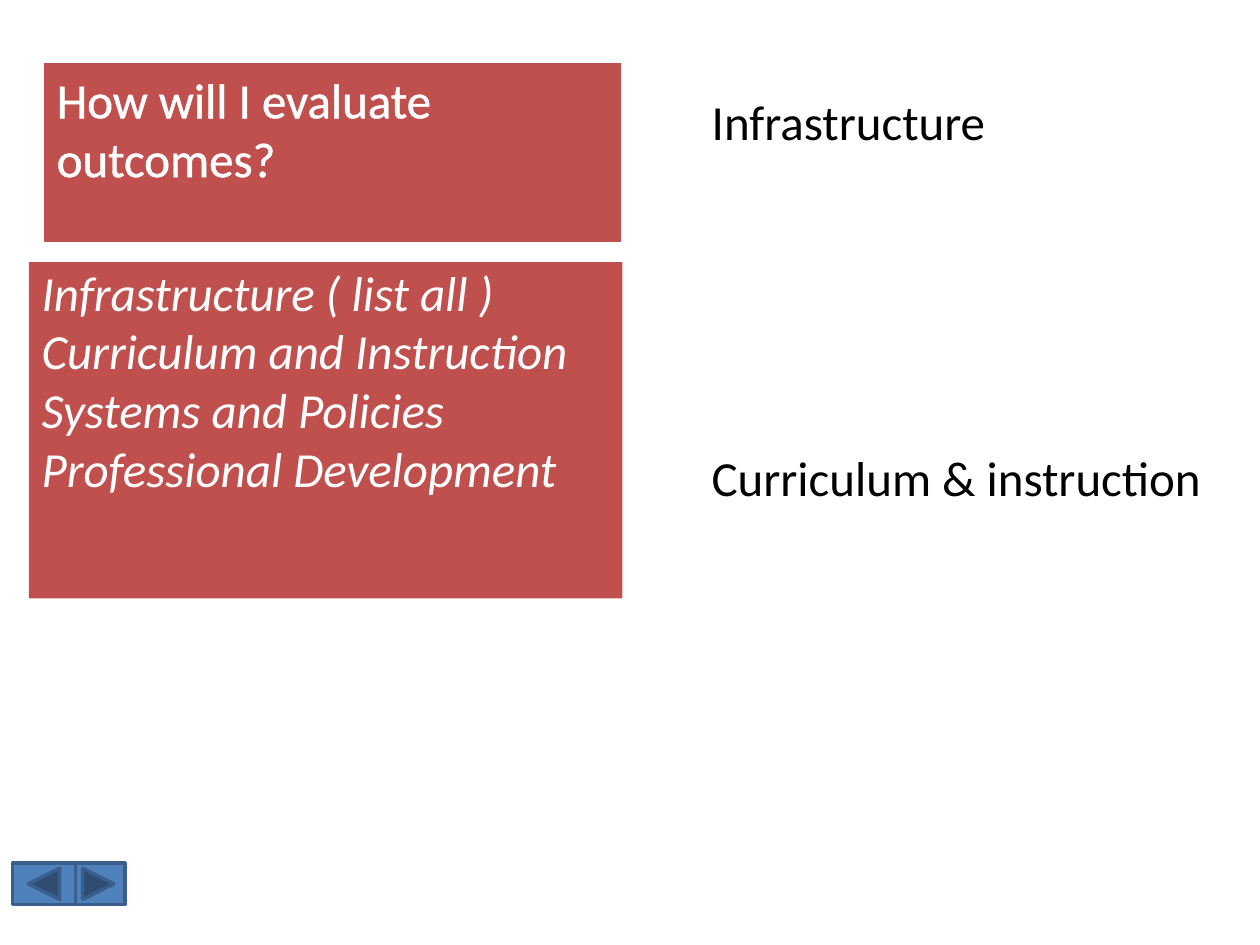
from lxml import etree
from pptx import Presentation
from pptx.dml.color import RGBColor
from pptx.enum.shapes import MSO_SHAPE
from pptx.enum.text import MSO_ANCHOR, MSO_AUTO_SIZE, PP_ALIGN
from pptx.oxml.ns import qn
from pptx.util import Inches, Pt

RED = RGBColor(0xC0, 0x50, 0x4D)
BLUE = RGBColor(0x4F, 0x81, 0xBD)
NAVY = RGBColor(0x3A, 0x5F, 0x8C)
WHITE = RGBColor(0xFF, 0xFF, 0xFF)
BLACK = RGBColor(0, 0, 0)
BACK = MSO_SHAPE.ACTION_BUTTON_BACK_OR_PREVIOUS
NEXT = MSO_SHAPE.ACTION_BUTTON_FORWARD_OR_NEXT
TOP, LEFT = MSO_ANCHOR.TOP, PP_ALIGN.LEFT
FIXED, GROW = MSO_AUTO_SIZE.NONE, MSO_AUTO_SIZE.SHAPE_TO_FIT_TEXT


def style(para, color):
    para.alignment = LEFT
    para.font.name = "Calibri"
    para.font.size = Pt(28)
    para.font.color.rgb = color


def panel(shape, left, top, width, height):
    shape.left, shape.top = Inches(left), Inches(top)
    shape.width, shape.height = Inches(width), Inches(height)
    shape.fill.solid()
    shape.fill.fore_color.rgb = RED
    frame = shape.text_frame
    frame.word_wrap = True
    frame.auto_size = FIXED
    frame.vertical_anchor = TOP
    return frame


prs = Presentation()
prs.slide_width, prs.slide_height = Inches(10), Inches(7.5)
slide = prs.slides.add_slide(prs.slide_layouts[1])
shapes = slide.shapes

# Question, with a thin white outline on its letters
frame = panel(shapes.title, 0.35, 0.5, 4.58, 1.42)
frame.text = "How will I evaluate outcomes?"
style(frame.paragraphs[0], WHITE)
props = frame.paragraphs[0].runs[0].font._element
edge = etree.Element(qn("a:ln"), w=str(Pt(1.45)))
fill = etree.SubElement(edge, qn("a:solidFill"))
etree.SubElement(fill, qn("a:srgbClr"), val=str(WHITE))
props.insert(0, edge)

# List of areas
frame = panel(slide.placeholders[1], 0.23, 2.08, 4.71, 2.67)
frame.margin_top = 0
frame.text = "\n".join([
    "Infrastructure ( list all )",
    "Curriculum and Instruction",
    "Systems and Policies",
    "Professional Development",
])
for para in frame.paragraphs:
    para.space_before = Pt(0)
    props = para._p.get_or_add_pPr()
    props.set("marL", "0")
    props.set("indent", "0")
    etree.SubElement(props, qn("a:buNone"))
    style(para, WHITE)
    para.font.italic = True

# Labels on the right
for text, top, width in [
    ("Infrastructure", 0.68, 3.62),
    ("Curriculum & instruction", 3.5, 4.17),
]:
    box = shapes.add_textbox(Inches(5.55), Inches(top), Inches(width), Inches(0.57))
    frame = box.text_frame
    frame.word_wrap = True
    frame.auto_size = GROW
    frame.text = text
    style(frame.paragraphs[0], BLACK)

# Page buttons
for kind, left, width in [(NEXT, 0.57, 0.42), (BACK, 0.1, 0.5)]:
    button = shapes.add_shape(kind, Inches(left), Inches(6.85), Inches(width), Inches(0.33))
    button.shadow.inherit = False
    button.fill.solid()
    button.fill.fore_color.rgb = BLUE
    button.line.color.rgb = NAVY
    button.line.width = Pt(2)

prs.save("out.pptx")
